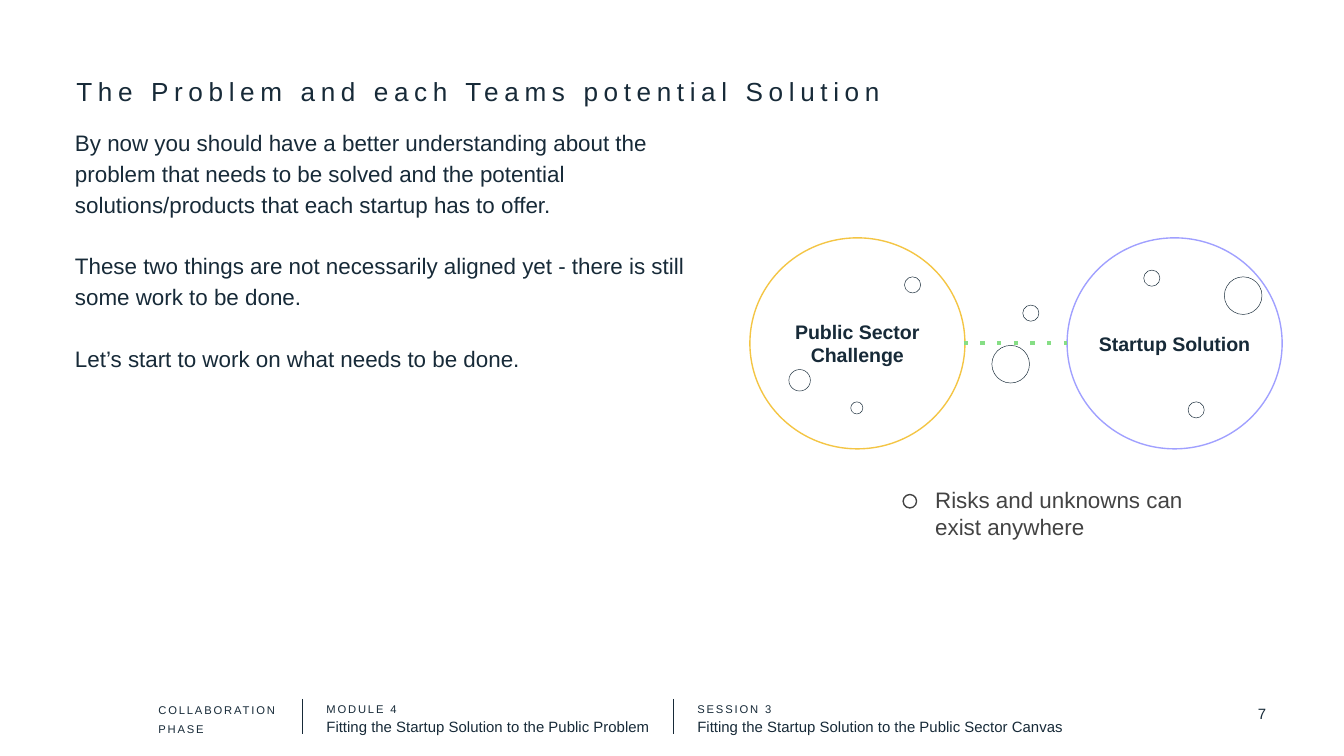
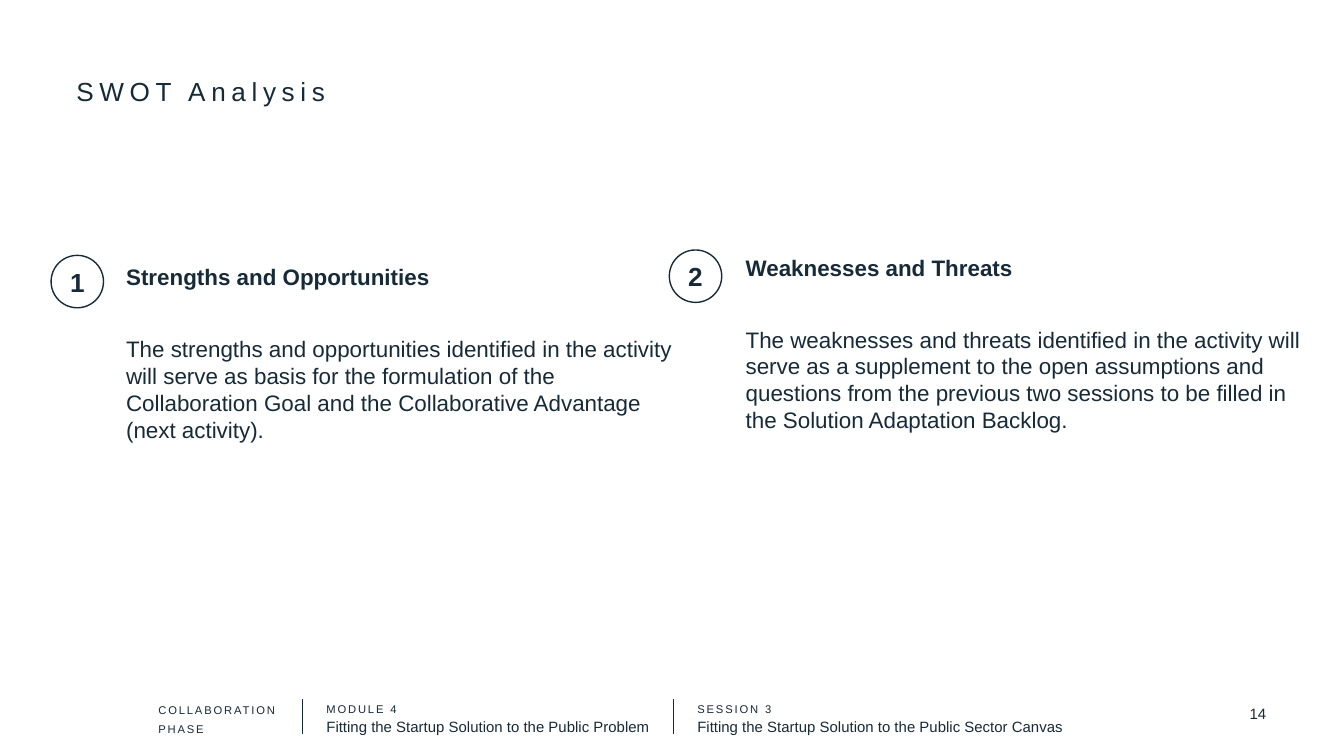
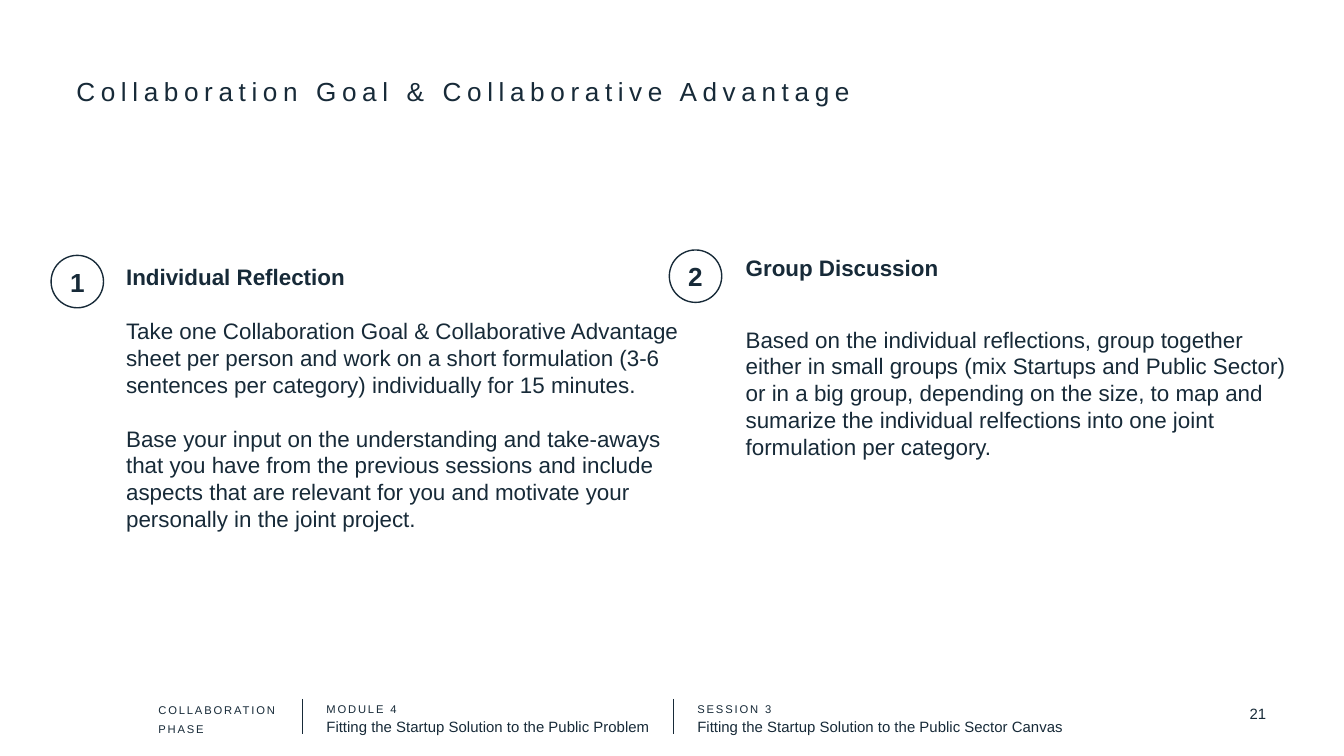
from dataclasses import dataclass

from lxml import etree
from pptx import Presentation
from pptx.dml.color import RGBColor
from pptx.enum.shapes import MSO_CONNECTOR, MSO_SHAPE
from pptx.enum.text import MSO_ANCHOR, PP_ALIGN
from pptx.oxml.ns import qn
from pptx.util import Pt

EMU_PER_PX = 9144  # 100 px to the inch
SLIDE_WIDTH = 1000 * EMU_PER_PX
SLIDE_HEIGHT = SLIDE_WIDTH * 9 // 16
BLANK_LAYOUT = 6

STRAIGHT = MSO_CONNECTOR.STRAIGHT
OVAL = MSO_SHAPE.OVAL
TOP, MIDDLE = MSO_ANCHOR.TOP, MSO_ANCHOR.MIDDLE
LEFT, CENTER, RIGHT = PP_ALIGN.LEFT, PP_ALIGN.CENTER, PP_ALIGN.RIGHT


@dataclass(frozen=True)
class Theme:
    font: str = "Arial"
    ink: str = "172A38"
    grey: str = "434343"
    paper: str = "FFFFFF"
    challenge: str = "F4C544"
    solution: str = "A0A0FF"
    bridge: str = "86DE85"
    title_size: float = 14
    body_size: float = 12
    circle_size: float = 10.5
    footer_size: float = 8
    label_size: float = 6


THEME = Theme()


@dataclass(frozen=True)
class Box:
    left: int
    top: int
    width: int
    height: int


@dataclass(frozen=True)
class Para:
    """Text with its style; sizes, gaps and tracking are in points."""
    text: str
    size: float = THEME.body_size
    color: str = THEME.ink
    bold: bool = False
    align: PP_ALIGN = LEFT
    tracking: float = 0
    space_before: float = 0
    line_spacing: float | Pt | None = None


@dataclass(frozen=True)
class Rule:
    left: int
    top: int
    right: int
    bottom: int
    color: str = THEME.ink
    weight: float = 0.5
    dash: str | None = None


@dataclass(frozen=True)
class Circle:
    box: Box
    line: str = THEME.ink
    weight: float = 0.75
    fill: str | None = None
    para: Para | None = None
    inset: int = 0


@dataclass(frozen=True)
class FooterBlock:
    box: Box
    paras: tuple[Para, ...]


@dataclass(frozen=True)
class StepSlot:
    """Where a numbered step puts its badge and its text."""
    badge: Box
    text: Box


@dataclass(frozen=True)
class Step:
    heading: str
    paragraphs: tuple[str, ...]
    gap: float


@dataclass(frozen=True)
class StepPage:
    number: int
    title: str
    steps: tuple[Step, Step]


def footer_block(box: Box, label: str, name: str) -> FooterBlock:
    spacing = Pt(10.6)
    return FooterBlock(box, (
        Para(label, THEME.label_size, tracking=1, line_spacing=spacing),
        Para(name, THEME.footer_size, line_spacing=spacing),
    ))


FOOTER_BLOCKS = (
    FooterBlock(Box(108, 509, 115, 47), tuple(
        Para(word, THEME.label_size, tracking=1, line_spacing=Pt(10.2))
        for word in ("COLLABORATION", "PHASE")
    )),
    footer_block(Box(233, 508, 332, 47), "MODULE 4",
                 "Fitting the Startup Solution to the Public Problem"),
    footer_block(Box(509, 508, 299, 47), "SESSION 3",
                 "Fitting the Startup Solution to the Public Sector Canvas"),
)
FOOTER_RULES = tuple(Rule(left, 520, left, 546) for left in (225, 501))
PAGE_NUMBER_BOX = Box(849, 516, 103, 30)
TITLE_BOX = Box(47, 46, 906, 45)

PROBLEM_PAGE_NUMBER = 7
PROBLEM_TITLE = "The Problem and each Teams potential Solution"
PROBLEM_TEXT = (
    "By now you should have a better understanding about the problem that needs to be "
    "solved and the potential solutions/products that each startup has to offer.",
    "These two things are not necessarily aligned yet - there is still some work to be done.",
    "Let’s start to work on what needs to be done.",
)
PROBLEM_GAP = 16.5
MAIN_CIRCLES = tuple(
    Circle(Box(left, 177, 160, 157), color,
           para=Para(text, THEME.circle_size, bold=True, align=CENTER))
    for left, color, text in (
        (558, THEME.challenge, "Public Sector Challenge"),
        (794, THEME.solution, "Startup Solution"),
    )
)
BRIDGE = Rule(717, 255, 794, 255, THEME.bridge, 2.25, "dot")
RISK_CIRCLES = tuple(
    Circle(Box(left, top, size, size), weight=0.25, fill=THEME.paper)
    for left, top, size in (
        (633, 299, 9), (738, 257, 28), (761, 227, 12), (851, 201, 12),
        (884, 299, 12), (911, 206, 28), (673, 206, 12), (587, 275, 16),
    )
)
LEGEND_MARKER = Circle(Box(672, 368, 10, 10), THEME.grey, fill=THEME.paper)
LEGEND_BOX = Box(686, 352, 210, 40)

STEP_SLOTS = (
    StepSlot(Box(38, 190, 39, 39), Box(84, 186, 433, 249)),
    StepSlot(Box(498, 186, 39, 39), Box(545, 179, 433, 205)),
)
WIDE_GAP, LINE_GAP = 24, 14.4
STEP_PAGES = (
    StepPage(14, "SWOT Analysis", (
        Step("Strengths and Opportunities", (
            "The strengths and opportunities identified in the activity will serve as basis "
            "for the formulation of the Collaboration Goal and the Collaborative Advantage "
            "(next activity).",
        ), WIDE_GAP),
        Step("Weaknesses and Threats", (
            "The weaknesses and threats identified in the activity will serve as a supplement "
            "to the open assumptions and questions from the previous two sessions to be "
            "filled in the Solution Adaptation Backlog.",
        ), WIDE_GAP),
    )),
    StepPage(21, "Collaboration Goal & Collaborative Advantage", (
        Step("Individual Reflection", (
            "Take one Collaboration Goal & Collaborative Advantage sheet per person and work "
            "on a short formulation (3-6 sentences per category) individually for 15 minutes.",
            "Base your input on the understanding and take-aways that you have from the "
            "previous sessions and include aspects that are relevant for you and motivate "
            "your personally in the joint project.",
        ), LINE_GAP),
        Step("Group Discussion", (
            "Based on the individual reflections, group together either in small groups (mix "
            "Startups and Public Sector) or in a big group, depending on the size, to map and "
            "sumarize the individual relfections into one joint formulation per category.",
        ), WIDE_GAP),
    )),
)


def px(length: int) -> int:
    return length * EMU_PER_PX


def place(box: Box) -> tuple[int, ...]:
    return tuple(px(side) for side in (box.left, box.top, box.width, box.height))


def color_of(code: str) -> RGBColor:
    return RGBColor.from_string(code)


def fill_frame(frame, paras: tuple[Para, ...], anchor: MSO_ANCHOR,
               inset_x: int, inset_y: int) -> None:
    frame.word_wrap = True
    frame.vertical_anchor = anchor
    frame.margin_left = frame.margin_right = px(inset_x)
    frame.margin_top = frame.margin_bottom = px(inset_y)
    for index, para in enumerate(paras):
        paragraph = frame.add_paragraph() if index else frame.paragraphs[0]
        paragraph.text = para.text
        paragraph.alignment = para.align
        if para.line_spacing:
            paragraph.line_spacing = para.line_spacing
        if para.space_before:
            paragraph.space_before = Pt(para.space_before)
        font = paragraph.font
        font.name = THEME.font
        font.size = Pt(para.size)
        font.bold = para.bold
        font.color.rgb = color_of(para.color)
        if para.tracking:
            properties = paragraph._p.get_or_add_pPr().get_or_add_defRPr()
            properties.set("spc", str(round(para.tracking * 100)))


def add_text(page, box: Box, *paras: Para, anchor: MSO_ANCHOR = TOP, inset_y: int = 10) -> None:
    frame = page.shapes.add_textbox(*place(box)).text_frame
    fill_frame(frame, paras, anchor, 10, inset_y)


def add_circle(page, circle: Circle) -> None:
    shape = page.shapes.add_shape(OVAL, *place(circle.box))
    shape.shadow.inherit = False
    if circle.fill:
        shape.fill.solid()
        shape.fill.fore_color.rgb = color_of(circle.fill)
    else:
        shape.fill.background()
    shape.line.color.rgb = color_of(circle.line)
    shape.line.width = Pt(circle.weight)
    if circle.para:
        fill_frame(shape.text_frame, (circle.para,), MIDDLE, circle.inset, circle.inset)


def add_rule(page, rule: Rule) -> None:
    ends = (px(end) for end in (rule.left, rule.top, rule.right, rule.bottom))
    connector = page.shapes.add_connector(STRAIGHT, *ends)
    connector.line.color.rgb = color_of(rule.color)
    connector.line.width = Pt(rule.weight)
    properties = connector._element.spPr
    if rule.dash:
        outline = properties.find(qn("a:ln"))
        etree.SubElement(outline, qn("a:prstDash")).set("val", rule.dash)
    etree.SubElement(properties, qn("a:effectLst"))


def add_page(deck, number: int, title: str):
    """Add a page with the shared footer, page number and title."""
    page = deck.slides.add_slide(deck.slide_layouts[BLANK_LAYOUT])
    for block in FOOTER_BLOCKS:
        add_text(page, block.box, *block.paras)
    for rule in FOOTER_RULES:
        add_rule(page, rule)
    add_text(page, PAGE_NUMBER_BOX, Para(str(number), THEME.footer_size, align=RIGHT),
             anchor=MIDDLE)
    add_text(page, TITLE_BOX, Para(title, THEME.title_size, tracking=3))
    return page


def add_problem_page(deck) -> None:
    page = add_page(deck, PROBLEM_PAGE_NUMBER, PROBLEM_TITLE)
    paras = (
        Para(text, line_spacing=1.15, space_before=PROBLEM_GAP if index else 0)
        for index, text in enumerate(PROBLEM_TEXT)
    )
    add_text(page, Box(46, 88, 496, 417), *paras, inset_y=5)
    add_text(page, LEGEND_BOX, Para("Risks and unknowns can exist anywhere", color=THEME.grey))
    for circle in (LEGEND_MARKER, *MAIN_CIRCLES):
        add_circle(page, circle)
    add_rule(page, BRIDGE)
    for circle in RISK_CIRCLES:
        add_circle(page, circle)


def add_step_page(deck, content: StepPage) -> None:
    page = add_page(deck, content.number, content.title)
    for number, (slot, step) in enumerate(zip(STEP_SLOTS, content.steps), start=1):
        label = Para(str(number), THEME.title_size, bold=True, align=CENTER)
        add_circle(page, Circle(slot.badge, para=label, inset=6))
        add_text(page, slot.text, Para(step.heading, bold=True),
                 *(Para(text, space_before=step.gap) for text in step.paragraphs))


def main() -> None:
    deck = Presentation()
    deck.slide_width = SLIDE_WIDTH
    deck.slide_height = SLIDE_HEIGHT
    add_problem_page(deck)
    for content in STEP_PAGES:
        add_step_page(deck, content)
    deck.save("out.pptx")


if __name__ == "__main__":
    main()
